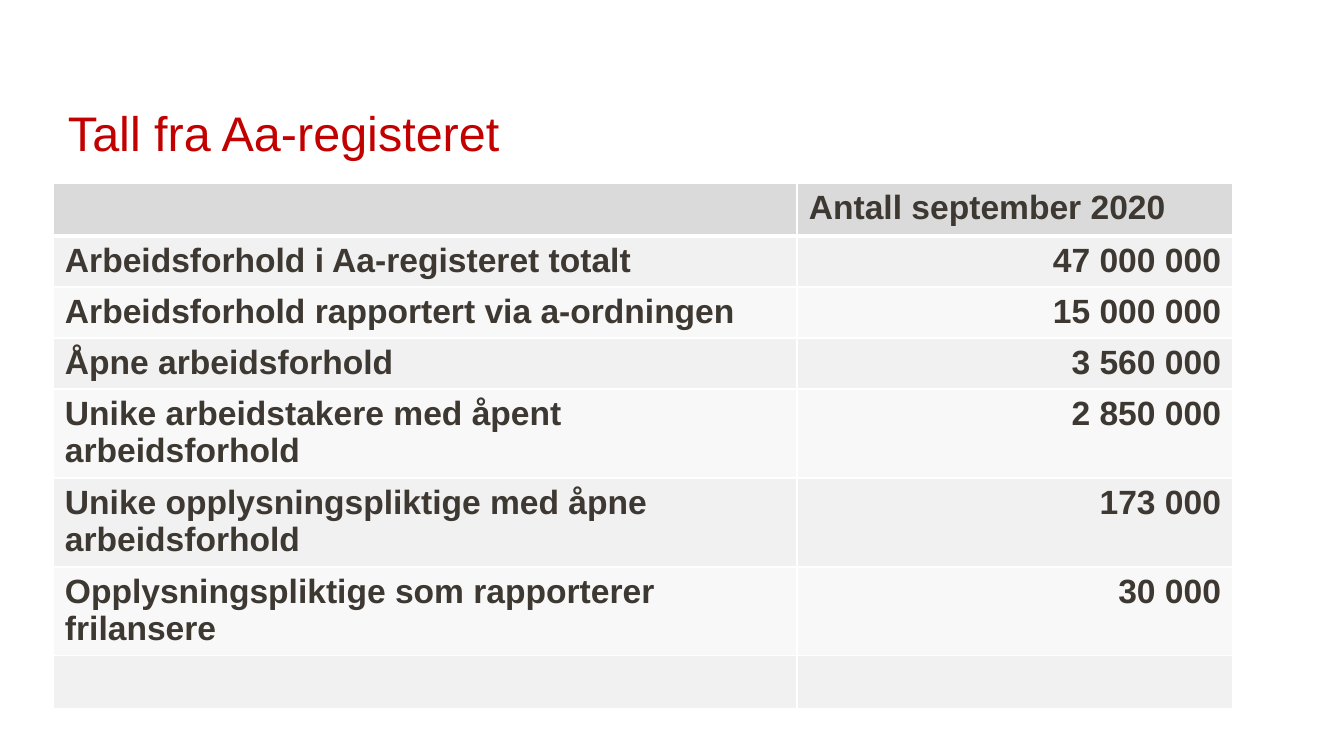
from dataclasses import dataclass

from lxml import etree
from pptx import Presentation
from pptx import util as u
from pptx.dml.color import RGBColor
from pptx.enum import text as t
from pptx.oxml.ns import qn

SCALE = 914400 / 134.4


def px(n):
    """Turn px into EMU."""
    return u.Emu(round(n * SCALE))


@dataclass(frozen=True)
class Theme:
    """Colours, font and type sizes."""
    font: str = "Arial"
    red: str = "C30000"
    ink: str = "3E3832"
    head: str = "DADADA"
    odd: str = "F1F1F1"
    even: str = "F8F8F8"
    rule: str = "FFFFFF"
    big: int = 26
    body: int = 18


class Deck:
    """Draws styled elements on the current slide."""

    def __init__(self, theme, wide, high):
        """Open a deck with one blank slide."""
        self.theme = theme
        self.prs = Presentation()
        self.prs.slide_width, self.prs.slide_height = px(wide), px(high)
        self.slide = self.prs.slides.add_slide(self.prs.slide_layouts[6])

    def label(self, frame, words, size, color, bold=False, align=t.PP_ALIGN.LEFT):
        """Put styled words in a text frame."""
        frame.text = words
        para = frame.paragraphs[0]
        para.alignment = align
        for run in para.runs:
            font = run.font
            font.name, font.size, font.bold = self.theme.font, u.Pt(size), bold
            font.color.rgb = RGBColor.from_string(color)

    def title(self, words, x, y, w, h):
        """Add a title set on the bottom of its box."""
        frame = self.slide.shapes.add_textbox(px(x), px(y), px(w), px(h)).text_frame
        frame.word_wrap = True
        frame.vertical_anchor = t.MSO_ANCHOR.BOTTOM
        frame.margin_left = frame.margin_right = px(13)
        frame.margin_top = frame.margin_bottom = px(6)
        self.label(frame, words, self.theme.big, self.theme.red)

    def border(self, cell, top, bottom):
        """Rule the four sides of a cell."""
        props = cell._tc.get_or_add_tcPr()
        sides = (("lnL", 1), ("lnR", 1), ("lnT", top), ("lnB", bottom))
        for spot, (side, width) in enumerate(sides):
            line = etree.Element(qn(f"a:{side}"), w=str(u.Pt(width)))
            fill = etree.SubElement(line, qn("a:solidFill"))
            etree.SubElement(fill, qn("a:srgbClr"), val=self.theme.rule)
            props.insert(spot, line)

    def table(self, rows, x, y, cols, highs):
        """Add a banded table with a header row."""
        grid = self.slide.shapes.add_table(
            len(rows), len(cols), px(x), px(y), px(sum(cols)), px(sum(highs))).table
        for col, wide in zip(grid.columns, cols):
            col.width = px(wide)
        for r, (row, high) in enumerate(zip(rows, highs)):
            grid.rows[r].height = px(high)
            for c, words in enumerate(row):
                self.cell(grid.cell(r, c), words, r, c)

    def cell(self, cell, words, r, c):
        """Fill and style one table cell."""
        theme = self.theme
        shade = (theme.odd if r % 2 else theme.even) if r else theme.head
        cell.fill.solid()
        cell.fill.fore_color.rgb = RGBColor.from_string(shade)
        cell.margin_left = cell.margin_right = px(12)
        cell.margin_top = cell.margin_bottom = px(6)
        align = t.PP_ALIGN.RIGHT if r and c else t.PP_ALIGN.LEFT
        self.label(cell.text_frame, words, theme.body, theme.ink, True, align)
        self.border(cell, 3 if r == 1 else 1, 1 if r else 3)


def main():
    """Build the slide and save it."""
    deck = Deck(Theme(), 1344, 756)
    rows = [
        ("", "Antall september 2020"),
        ("Arbeidsforhold i Aa-registeret totalt", "47 000 000"),
        ("Arbeidsforhold rapportert via a-ordningen", "15 000 000"),
        ("Åpne arbeidsforhold", "3 560 000"),
        ("Unike arbeidstakere med åpent arbeidsforhold", "2 850 000"),
        ("Unike opplysningspliktige med åpne arbeidsforhold", "173 000"),
        ("Opplysningspliktige som rapporterer frilansere", "30 000"),
        ("", ""),
    ]
    deck.table(rows, 53, 183, (744, 436), [51] * 4 + [89] * 3 + [51])
    deck.title("Tall fra Aa-registeret", 55, 27, 1232, 140)
    deck.prs.save("out.pptx")


if __name__ == "__main__":
    main()
